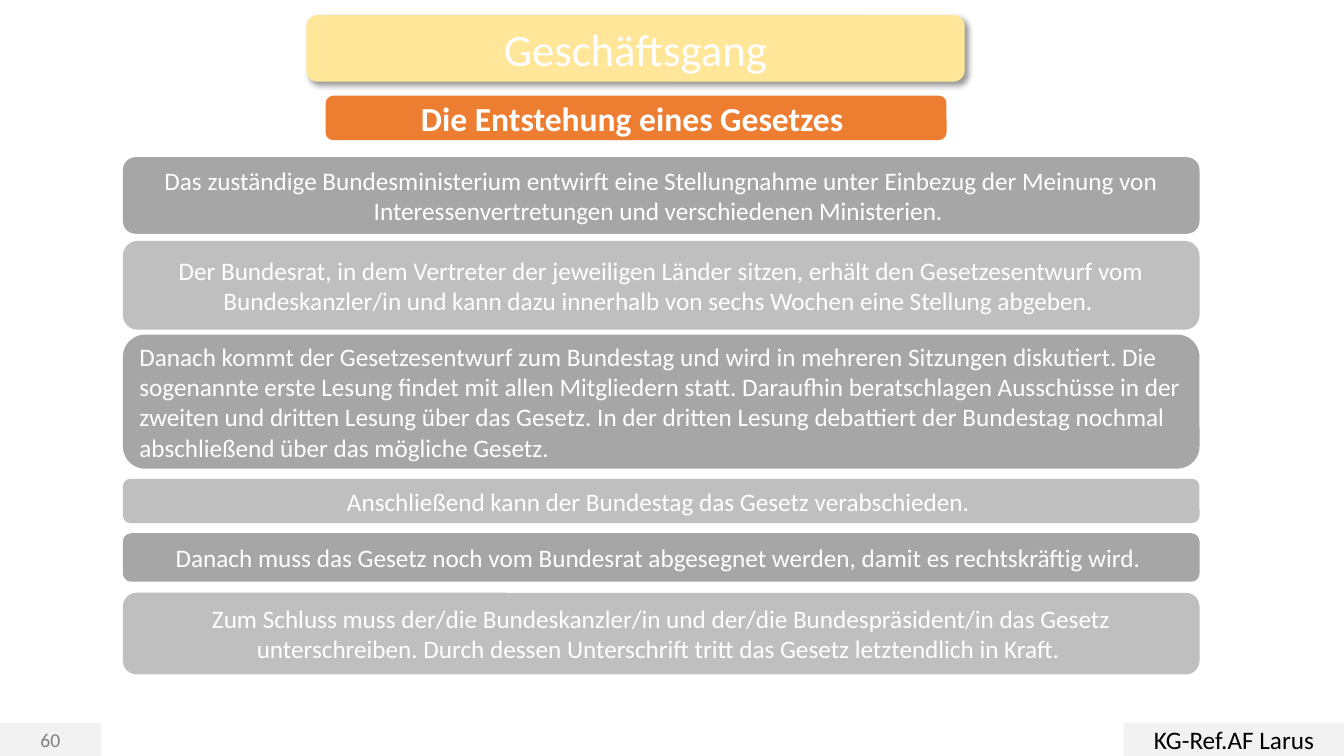
from lxml import etree
from pptx import Presentation
from pptx import util as u
from pptx.dml import color
from pptx.enum import shapes, text
from pptx.oxml import ns

FONT = "Calibri"
WHITE = "FFFFFF"
STEP_LEFT, STEP_WIDTH = 87.8, 769
STEP_FILLS = ("A6A6A6", "BFBFBF")

# top, height, alignment, wording
STEPS = [
    (112.3, 54.7, "CENTER",
     "Das zuständige Bundesministerium entwirft eine Stellungnahme unter Einbezug "
     "der Meinung von Interessenvertretungen und verschiedenen Ministerien. "),
    (172.1, 63.4, "CENTER",
     "Der Bundesrat, in dem Vertreter der jeweiligen Länder sitzen, erhält den "
     "Gesetzesentwurf vom Bundeskanzler/in und kann dazu innerhalb von sechs Wochen "
     "eine Stellung abgeben. "),
    (239, 95.8, "LEFT",
     "Danach kommt der Gesetzesentwurf zum Bundestag und wird in mehreren Sitzungen "
     "diskutiert. Die sogenannte erste Lesung findet mit allen Mitgliedern statt. "
     "Daraufhin beratschlagen Ausschüsse in der zweiten und dritten Lesung über das "
     "Gesetz. In der dritten Lesung debattiert der Bundestag nochmal abschließend "
     "über das mögliche Gesetz."),
    (342, 31.7, "CENTER",
     "Anschließend kann der Bundestag das Gesetz verabschieden. "),
    (380.9, 34.6, "CENTER",
     "Danach muss das Gesetz noch vom Bundesrat abgesegnet werden, damit es "
     "rechtskräftig wird. "),
    (423.4, 58.3, "CENTER",
     "Zum Schluss muss der/die Bundeskanzler/in und der/die Bundespräsident/in das "
     "Gesetz unterschreiben. Durch dessen Unterschrift tritt das Gesetz letztendlich "
     "in Kraft. "),
]


def rgb(value):
    return color.RGBColor.from_string(value)


def write(box, wording, size=18, ink=WHITE, bold=False, align="CENTER"):
    frame = box.text_frame
    frame.word_wrap = True
    frame.vertical_anchor = text.MSO_ANCHOR.MIDDLE
    para = frame.paragraphs[0]
    para.alignment = getattr(text.PP_ALIGN, align)
    span = para.add_run()
    span.text = wording
    span.font.name = FONT
    span.font.size = u.Pt(size)
    span.font.bold = bold
    span.font.color.rgb = rgb(ink)


def add_box(page, kind, left, top, width, height, fill, line=None):
    box = page.shapes.add_shape(kind, u.Pt(left), u.Pt(top), u.Pt(width), u.Pt(height))
    box.shadow.inherit = False
    box.fill.solid()
    box.fill.fore_color.rgb = rgb(fill)
    if line:
        box.line.color.rgb = rgb(line)
        box.line.width = u.Pt(1)
    else:
        box.line.fill.background()
    return box


def add_shadow(box, blur, distance, degrees, opacity):
    """Cast a black outer shadow; opacity is in percent."""
    effects = box.element.spPr.find(ns.qn("a:effectLst"))
    shadow = etree.SubElement(
        effects, ns.qn("a:outerShdw"), blurRad=str(u.Pt(blur)),
        dist=str(u.Pt(distance)), dir=str(degrees * 60000), algn="tl", rotWithShape="0")
    tone = etree.SubElement(shadow, ns.qn("a:srgbClr"), val="000000")
    etree.SubElement(tone, ns.qn("a:alpha"), val=str(opacity * 1000))


def add_headings(page):
    rounded = shapes.MSO_SHAPE.ROUNDED_RECTANGLE
    title = add_box(page, rounded, 218.9, 10.8, 470.2, 47.5, "FFE699")
    add_shadow(title, blur=4, distance=3, degrees=45, opacity=40)
    write(title, "Geschäftsgang", size=32)
    topic = add_box(page, rounded, 232.6, 68.4, 443.5, 31.7, "ED7D31")
    write(topic, "Die Entstehung eines Gesetzes ", size=24, bold=True)


def add_steps(page):
    for index, (top, height, align, wording) in enumerate(STEPS):
        fill = STEP_FILLS[index % len(STEP_FILLS)]
        step = add_box(page, shapes.MSO_SHAPE.ROUNDED_RECTANGLE,
                       STEP_LEFT, top, STEP_WIDTH, height, fill)
        write(step, wording, align=align)


def add_footer(page):
    plain = shapes.MSO_SHAPE.RECTANGLE
    number = add_box(page, plain, 0, 517, 72, 23, "F2F2F2", line="F2F2F2")
    write(number, "60", size=14, ink="808080")
    course = add_box(page, plain, 802.8, 516.2, 157.2, 23.8, "F2F2F2")
    write(course, "KG-Ref.AF Larus", ink="000000")


def main():
    deck = Presentation()
    deck.slide_width, deck.slide_height = u.Pt(960), u.Pt(540)
    page = deck.slides.add_slide(deck.slide_layouts[6])
    add_headings(page)
    add_steps(page)
    add_footer(page)
    deck.save("out.pptx")


if __name__ == "__main__":
    main()
